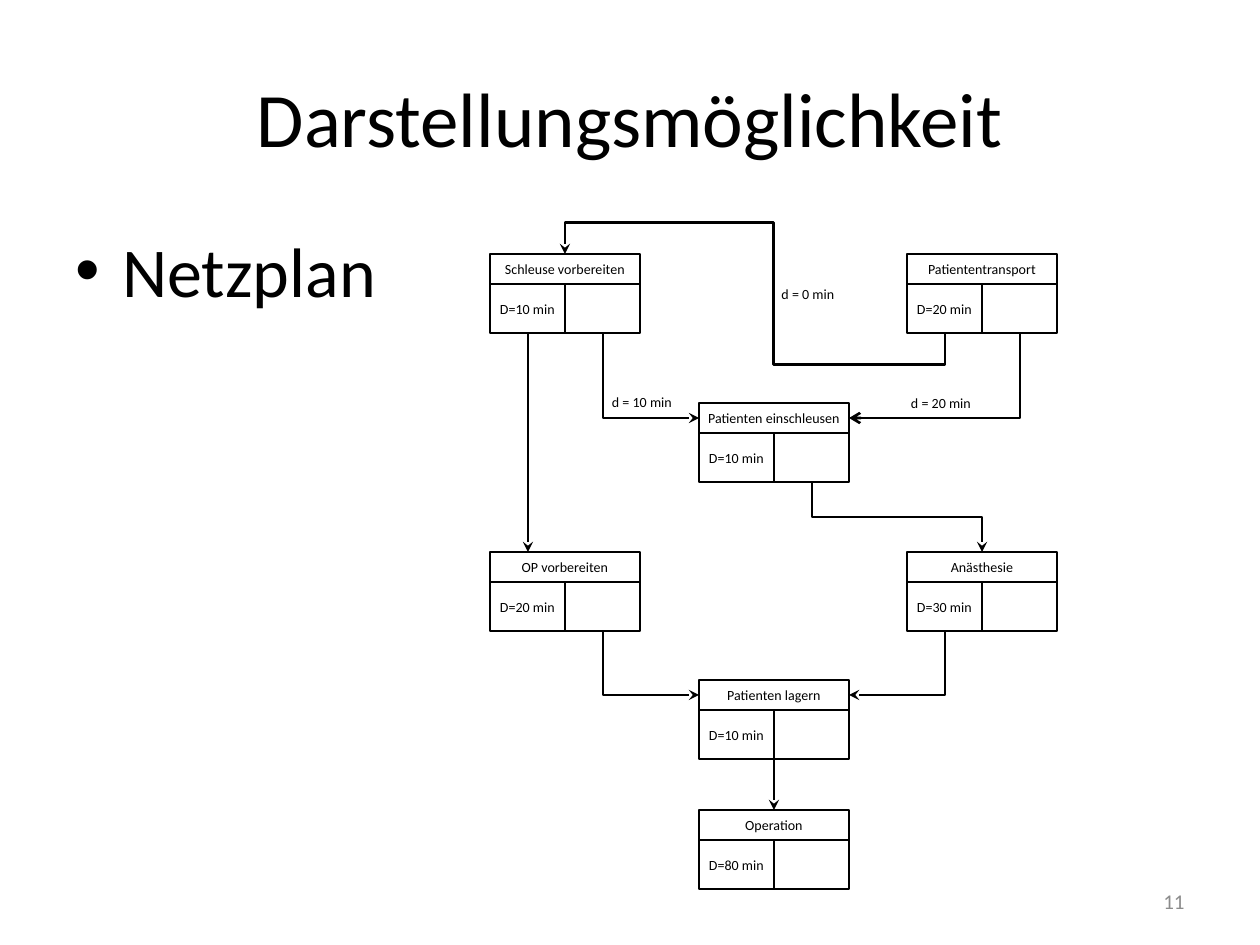
from lxml.etree import SubElement as Sub
from pptx import Presentation
from pptx.dml.color import RGBColor
from pptx.enum.shapes import MSO_CONNECTOR as Link, MSO_SHAPE as Shape
from pptx.enum.text import MSO_ANCHOR as Anchor, PP_ALIGN as Align
from pptx.oxml.ns import qn
from pptx.util import Emu, Pt

FONT, BLACK, GREY = "Calibri", "000000", "8C8C8C"
WIDE, HEAD, CELL = 150, 30, 49           # node width, header and cell height
HALF, TALL = WIDE // 2, HEAD + CELL
LEFT, RIGHT = 38, 113                    # centres of the two cells
COLS, ROWS = (490, 699, 907), (254, 403, 552, 680, 810)

# name: (label, duration, column, row)
NODES = {
    "lock": ("Schleuse vorbereiten", 10, 0, 0),
    "move": ("Patiententransport", 20, 2, 0),
    "admit": ("Patienten einschleusen", 10, 1, 1),
    "room": ("OP vorbereiten", 20, 0, 2),
    "sleep": ("Anästhesie", 30, 2, 2),
    "place": ("Patienten lagern", 10, 1, 3),
    "operate": ("Operation", 80, 1, 4),
}
# start node, its offset, end node, its offset, number of elbow parts, arrowhead
LINKS = [
    ("lock", (RIGHT, TALL), "admit", (0, 15), 2, "stealth"),
    ("move", (RIGHT, TALL), "admit", (WIDE, 15), 2, "arrow"),
    ("move", (LEFT, TALL), "lock", (HALF, 0), 5, "stealth"),
    ("lock", (LEFT, TALL), "room", (LEFT, 0), 1, "stealth"),
    ("admit", (RIGHT, TALL), "sleep", (HALF, 0), 3, "stealth"),
    ("room", (RIGHT, TALL), "place", (0, 15), 2, "stealth"),
    ("sleep", (LEFT, TALL), "place", (WIDE, 15), 2, "stealth"),
    ("place", (HALF, HEAD), "operate", (HALF, 0), 1, "stealth"),
]
BENDS = {5: (-40000, 45100, 140000)}
# text, left, top, width
LABELS = [("d = 10 min", 599, 387, 86), ("d = 0 min", 769, 279, 78),
          ("d = 20 min", 898, 388, 86)]


def px(num):
    return Emu(round(num * 914400 / 126))


def hue(code):
    return RGBColor.from_string(code)


def write(shape, text, size, align, color=BLACK, anchor=Anchor.MIDDLE):
    frame = shape.text_frame
    frame.text = text
    frame.vertical_anchor = anchor
    para = frame.paragraphs[0]
    para.alignment = align
    font = para.runs[0].font
    font.name, font.size = FONT, Pt(size)
    font.color.rgb = hue(color)
    return para


def add_text(slide, text, box, size, align, wrap=True, **look):
    shape = slide.shapes.add_textbox(*map(px, box))
    shape.text_frame.word_wrap = wrap
    return write(shape, text, size, align, **look)


def add_cell(slide, box, text="", pad=10):
    cell = slide.shapes.add_shape(Shape.RECTANGLE, *map(px, box))
    cell.shadow.inherit = False
    cell.fill.background()
    cell.line.color.rgb, cell.line.width = hue(BLACK), Pt(1.5)
    if text:
        frame = cell.text_frame
        frame.margin_left = frame.margin_right = px(pad)
        frame.word_wrap = True
        write(cell, text, 8, Align.CENTER)


def add_node(slide, x, y, label, time):
    add_cell(slide, (x, y, WIDE, HEAD), label, 5)
    add_cell(slide, (x, y + HEAD, HALF, CELL), f"D={time} min")
    add_cell(slide, (x + HALF, y + HEAD, HALF, CELL))


def add_link(slide, start, end, parts, tip):
    (x1, y1), (x2, y2) = start, end
    if parts == 1:
        link = slide.shapes.add_connector(Link.STRAIGHT, *map(px, start + end))
    else:
        # The elbow leaves downwards, so its frame is turned by a quarter
        dx, dy = x2 - x1, y2 - y1
        wide, high = abs(dy), abs(dx)
        x, y = (x1 + x2 - wide) / 2, (y1 + y2 - high) / 2
        link = slide.shapes.add_connector(
            Link.ELBOW, *map(px, (x, y, x + wide, y + high)))
        props = link.element.spPr
        frame = props.find(qn("a:xfrm"))
        frame.set("rot", "16200000" if dx > 0 else "5400000")
        if (dx < 0) != (dy > 0):
            frame.set("flipH", "1")
        form = props.find(qn("a:prstGeom"))
        form.set("prst", f"bentConnector{parts}")
        for num, bend in enumerate(BENDS.get(parts, ()), 1):
            Sub(form.find(qn("a:avLst")), qn("a:gd"),
                name=f"adj{num}", fmla=f"val {bend}")
    link.line.color.rgb, link.line.width = hue(BLACK), Pt(1.5)
    props = link.element.spPr
    Sub(props.find(qn("a:ln")), qn("a:tailEnd"), type=tip)
    Sub(props, qn("a:effectLst"))


def add_title(slide, box):
    title = slide.shapes.title
    title.left, title.top, title.width, title.height = map(px, box)
    write(title, "Darstellungsmöglichkeit", 44, Align.CENTER)


def add_bullet(slide, box):
    para = add_text(slide, "Netzplan", box, 40, Align.LEFT, anchor=Anchor.TOP)
    para.space_before = Pt(8)
    props = para._p.get_or_add_pPr()
    props.set("marL", str(px(47)))
    props.set("indent", str(px(-47)))
    Sub(props, qn("a:buFont"), typeface="Arial")
    Sub(props, qn("a:buChar"), char="•")


def add_plan(slide):
    spots = {}
    for name, (label, time, col, row) in NODES.items():
        spots[name] = COLS[col], ROWS[row]
        add_node(slide, *spots[name], label, time)

    def port(name, shift):
        return spots[name][0] + shift[0], spots[name][1] + shift[1]

    for first, out, last, into, parts, tip in LINKS:
        add_link(slide, port(first, out), port(last, into), parts, tip)
    for text, x, y, wide in LABELS:
        add_text(slide, text, (x, y, wide, 30), 8, Align.CENTER,
                 wrap=False, anchor=Anchor.TOP)


def main():
    deck = Presentation()
    deck.slide_width, deck.slide_height = px(1260), px(945)
    slide = deck.slides.add_slide(deck.slide_layouts[5])
    add_title(slide, (63, 38, 1134, 158))
    add_bullet(slide, (63, 221, 1134, 624))
    add_plan(slide)
    # Page number
    add_text(slide, "11", (903, 876, 294, 50), 12, Align.RIGHT, color=GREY)
    deck.save("out.pptx")


if __name__ == "__main__":
    main()
